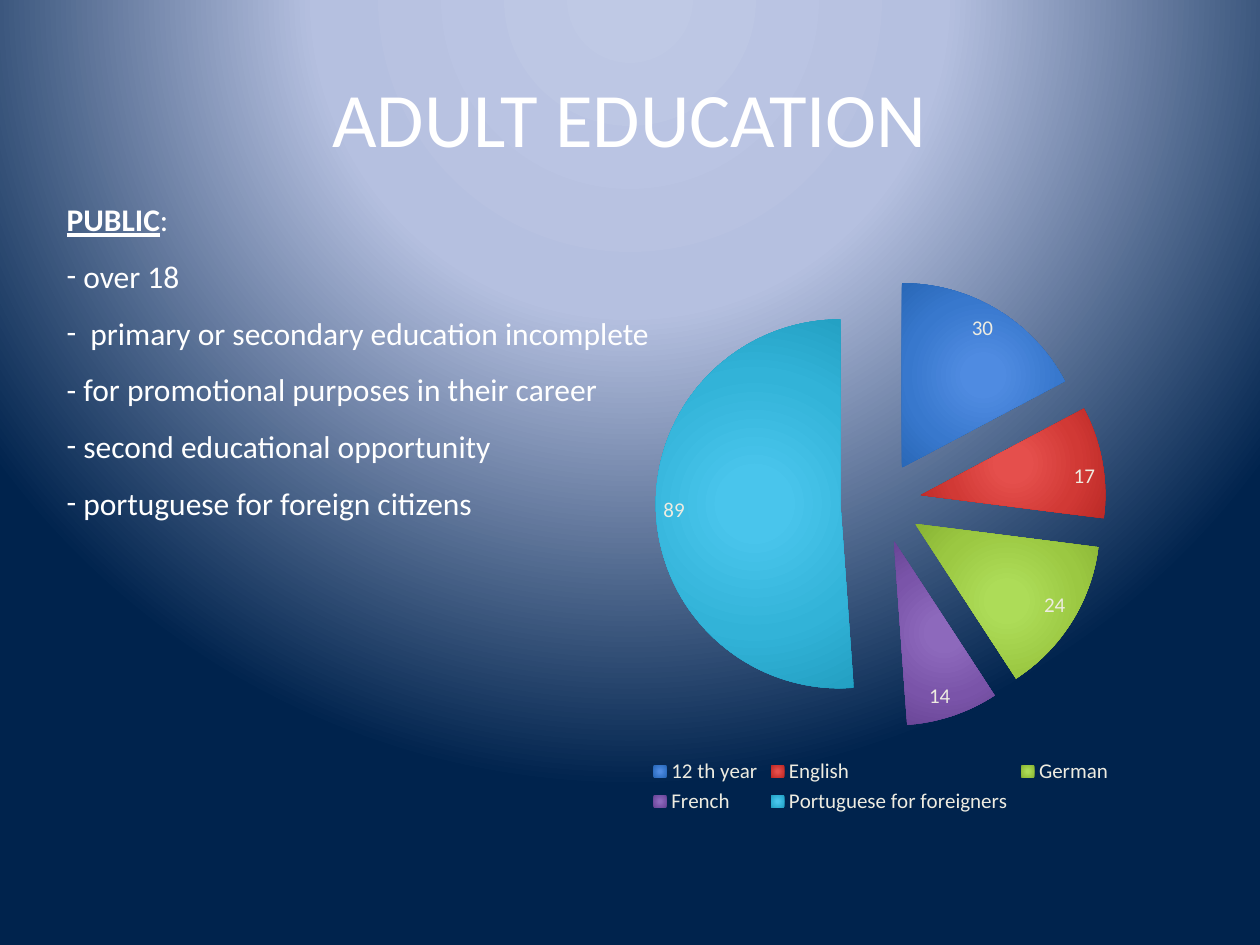
from lxml.etree import SubElement
from pptx import Presentation
from pptx.chart.data import CategoryChartData
from pptx.dml.color import RGBColor
from pptx.enum.chart import XL_CHART_TYPE, XL_LABEL_POSITION, XL_LEGEND_POSITION
from pptx.enum.text import MSO_ANCHOR, MSO_AUTO_SIZE, PP_ALIGN
from pptx.oxml.ns import qn
from pptx.util import Emu, Pt

FONT = "Calibri"
WHITE = RGBColor(0xFF, 0xFF, 0xFF)
CREAM = RGBColor(0xEE, 0xEC, 0xE1)

# Content
TITLE = "ADULT EDUCATION"
HEADING = "PUBLIC"
POINTS = [  # text, has a dash bullet
    (" over 18", True),
    ("  primary or secondary education incomplete", True),
    ("- for promotional purposes in their career", False),
    (" second educational opportunity", True),
    (" portuguese for foreign citizens", True),
]
COURSES = [  # name, students, gradient colours from centre to edge
    ("12 th year", 30, ("4F8BE2", "4F8BE1", "3878CD", "2A69B9", "2166B9")),
    ("English", 17, ("E6504C", "E54F4C", "D13935", "BD2B28", "BD221E")),
    ("German", 24, ("AEDD58", "ADDC58", "9BC842", "8AB535", "88B42C")),
    ("French", 14, ("8E6ABD", "8D69BC", "7A54A9", "6A4697", "664095")),
    ("Portuguese for foreigners", 89,
     ("49C6ED", "49C5EC", "32B3D8", "24A1C4", "1AA0C4")),
]
SLICE_STOPS = (0, 15, 62, 97, 100)
BACKGROUND = ("BFC9E5", "B5C0E0", "00234D")
BACKGROUND_STOPS = (0, 40, 100)

# Places in px: left, top, width, height
SLIDE_SIZE = (1260, 945)
TITLE_BOX = (63, 38, 1134, 157)
BODY_BOX = (54, 175, 1150, 357)
CHART_BOX = (461, 260, 840, 559)


def px(value):
    return Emu(round(value * 914400 / 126))


def place(shape, box):
    shape.left, shape.top, shape.width, shape.height = map(px, box)


def add_run(paragraph, text, size, bold=False, underline=False):
    run = paragraph.add_run()
    run.text = text
    style_font(run.font, size, WHITE)
    run.font.bold = bold
    run.font.underline = underline


def style_font(font, size, color):
    font.name = FONT
    font.size = Pt(size)
    font.color.rgb = color


def make_radial(gradient, positions, colors, focus):
    """Refill a gradFill element with a circular gradient around focus."""
    for child in list(gradient):
        gradient.remove(child)
    stops = SubElement(gradient, qn("a:gsLst"))
    for position, color in zip(positions, colors):
        stop = SubElement(stops, qn("a:gs"), pos=str(position * 1000))
        SubElement(stop, qn("a:srgbClr"), val=color)
    circle = SubElement(gradient, qn("a:path"))
    circle.set("path", "circle")
    rectangle = SubElement(circle, qn("a:fillToRect"))
    for side, percent in zip("ltrb", focus):
        rectangle.set(side, str(percent * 1000))


def set_bullet(paragraph, dashed):
    properties = paragraph._p.get_or_add_pPr()
    properties.set("marL", "0")
    properties.set("indent", "0")
    if dashed:
        SubElement(properties, qn("a:buFont"), typeface=FONT)
        SubElement(properties, qn("a:buChar"), char="-")
    else:
        SubElement(properties, qn("a:buNone"))


presentation = Presentation()
presentation.slide_width, presentation.slide_height = map(px, SLIDE_SIZE)
slide = presentation.slides.add_slide(presentation.slide_layouts[1])

# Background
slide.background.fill.gradient()
make_radial(next(slide.element.iter(qn("a:gradFill"))),
            BACKGROUND_STOPS, BACKGROUND, (50, -80, 50, 180))

# Title
title = slide.shapes.title
place(title, TITLE_BOX)
title.text_frame.vertical_anchor = MSO_ANCHOR.MIDDLE
title.text_frame.paragraphs[0].alignment = PP_ALIGN.CENTER
add_run(title.text_frame.paragraphs[0], TITLE, 44)

# Public list
body = slide.placeholders[1]
place(body, BODY_BOX)
frame = body.text_frame
frame.word_wrap = True
frame.auto_size = MSO_AUTO_SIZE.SHAPE_TO_FIT_TEXT
heading = frame.paragraphs[0]
add_run(heading, HEADING, 18, bold=True, underline=True)
add_run(heading, ":", 18)
rows = [(heading, False)]
for text, dashed in POINTS:
    paragraph = frame.add_paragraph()
    add_run(paragraph, text, 18)
    rows.append((paragraph, dashed))
for paragraph, dashed in rows:
    paragraph.line_spacing = 1.5
    paragraph.space_before = Pt(0)
    set_bullet(paragraph, dashed)

# Pie chart
data = CategoryChartData()
data.categories = [name for name, _, _ in COURSES]
data.add_series("Series 1", [students for _, students, _ in COURSES])
chart = slide.shapes.add_chart(
    XL_CHART_TYPE.PIE, *map(px, CHART_BOX), data).chart
chart.has_title = False
style_font(chart.font, 10, WHITE)
chart.has_legend = True
chart.legend.position = XL_LEGEND_POSITION.BOTTOM
chart.legend.include_in_layout = False
style_font(chart.legend.font, 12, CREAM)

plot = chart.plots[0]
plot.vary_by_categories = True
plot.has_data_labels = True
labels = plot.data_labels
labels.show_value = True
labels.show_percentage = False
labels.position = XL_LABEL_POSITION.INSIDE_END
style_font(labels.font, 12, CREAM)

# Slices
series = plot.series[0]
for index, (_, _, colors) in enumerate(COURSES):
    fill = series.points[index].format.fill
    fill.gradient()
series_element = next(chart.element.iter(qn("c:ser")))
for gradient, (_, _, colors) in zip(series_element.iter(qn("a:gradFill")), COURSES):
    make_radial(gradient, SLICE_STOPS, colors, (50, 50, 50, 50))
explosion = SubElement(series_element, qn("c:explosion"), val="22")
series_element.find(qn("c:tx")).addnext(explosion)

presentation.save("out.pptx")
